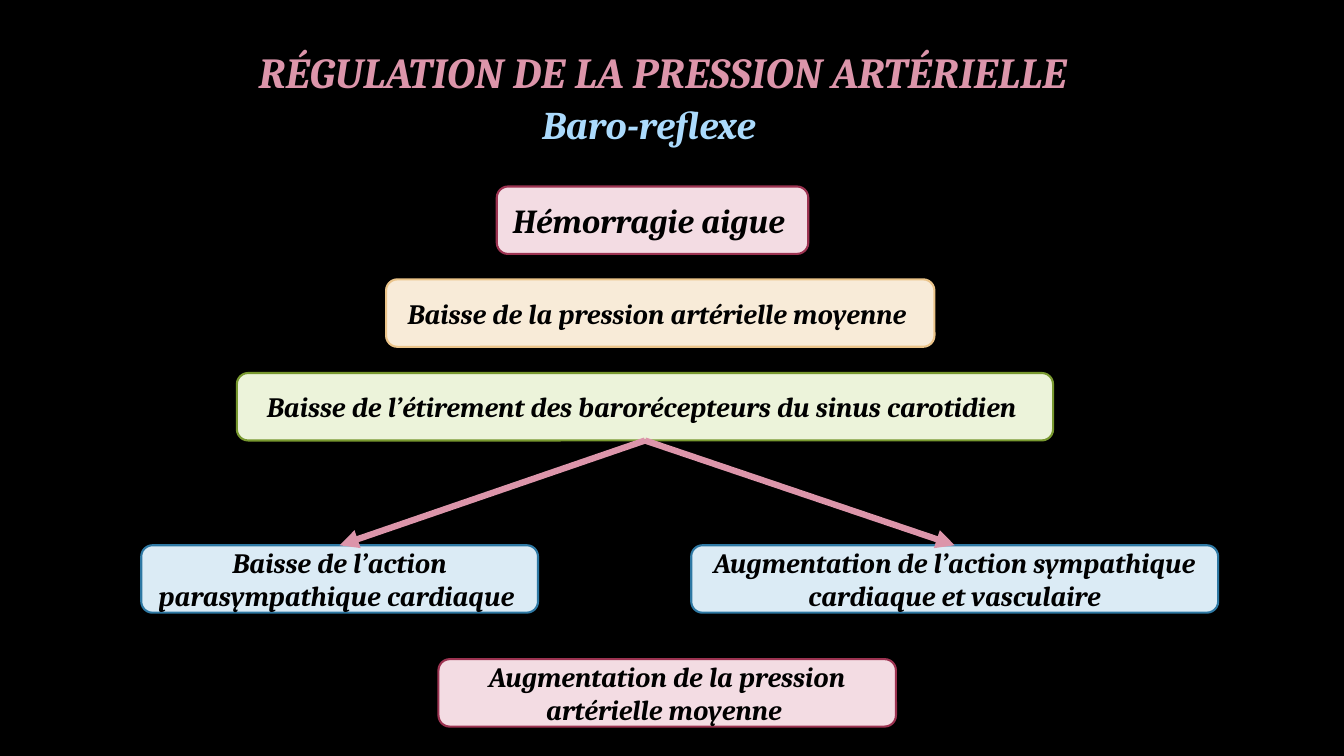
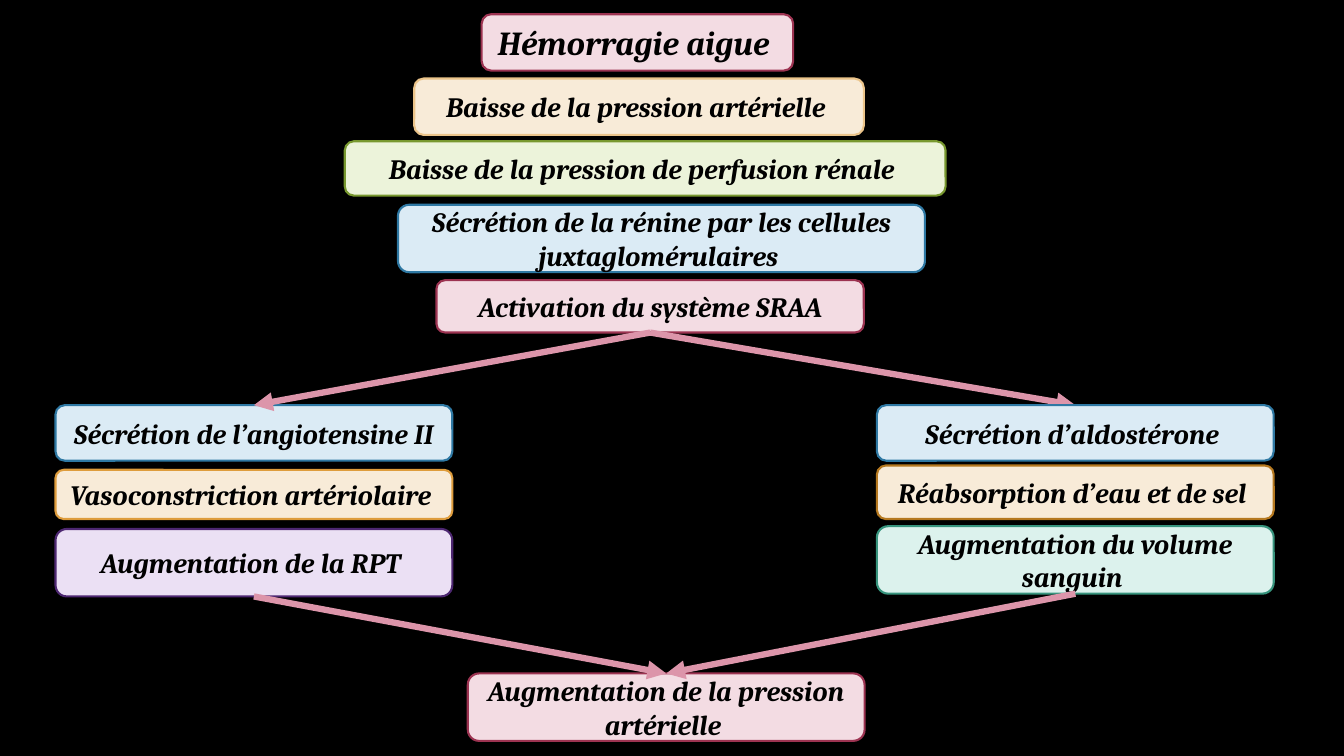
from lxml import etree
from pptx import Presentation
from pptx.dml.color import RGBColor
from pptx.enum.shapes import MSO_CONNECTOR, MSO_SHAPE
from pptx.enum.text import MSO_ANCHOR, PP_ALIGN
from pptx.oxml.ns import qn
from pptx.util import Cm, Pt

ROUNDED = MSO_SHAPE.ROUNDED_RECTANGLE
STRAIGHT = MSO_CONNECTOR.STRAIGHT
CENTER = PP_ALIGN.CENTER
TOP = MSO_ANCHOR.TOP
MIDDLE = MSO_ANCHOR.MIDDLE
TITLE_ONLY, BLANK = 5, 6
TOP_SITE, BOTTOM_SITE = 0, 2

BLACK = RGBColor(0x00, 0x00, 0x00)
ROSE = RGBColor(0xDC, 0x95, 0xAA)
SKY = RGBColor(0xAB, 0xDA, 0xFC)
CREAM = RGBColor(0xF8, 0xEB, 0xD8)

# Box styles: fill colour, outline colour
PINK = (RGBColor(0xF3, 0xDC, 0xE3), RGBColor(0x9C, 0x33, 0x51))
SAND = (CREAM, RGBColor(0xEB, 0xC4, 0x8A))
ORANGE = (CREAM, RGBColor(0xDE, 0x9C, 0x3C))
BROWN = (CREAM, RGBColor(0xB5, 0x78, 0x1F))
GREEN = (RGBColor(0xEC, 0xF3, 0xDA), RGBColor(0x78, 0x98, 0x2F))
BLUE = (RGBColor(0xDB, 0xEB, 0xF5), RGBColor(0x2E, 0x78, 0xA3))
TEAL = (RGBColor(0xDC, 0xF2, 0xED), RGBColor(0x37, 0x94, 0x7D))
PURPLE = (RGBColor(0xEB, 0xE0, 0xF4), RGBColor(0x4D, 0x27, 0x71))

BOX_HEIGHT = 1.7
COLUMN_WIDTH = 10
WIDE_WIDTH = 13.28
START_WIDTH = 7.85


class Deck:
    """Holds the shared style and the slide being filled; lengths are in cm."""

    font = "Cambria"

    def __init__(self):
        self.presentation = Presentation()
        self.presentation.slide_width = Cm(33.87)
        self.presentation.slide_height = Cm(19.05)
        background = self.presentation.slide_master.background.fill
        background.solid()
        background.fore_color.rgb = BLACK
        self.slide = None

    def new_slide(self, layout):
        layouts = self.presentation.slide_layouts
        self.slide = self.presentation.slides.add_slide(layouts[layout])

    def add_text(self, shape, text, size, color, anchor=MIDDLE):
        frame = shape.text_frame
        frame.word_wrap = True
        frame.vertical_anchor = anchor
        paragraph = frame.paragraphs[0]
        paragraph.alignment = CENTER
        run = paragraph.add_run()
        run.text = text
        font = run.font
        font.name, font.size = self.font, Pt(size)
        font.bold = font.italic = True
        font.color.rgb = color

    def title(self, text):
        title = self.slide.shapes.title
        title.left, title.top = Cm(2.44), Cm(0)
        title.width, title.height = Cm(28.75), Cm(3.6)
        self.add_text(title, text, 30.6, ROSE)

    def subtitle(self, text):
        box = self.slide.shapes.add_textbox(Cm(8.86), Cm(2.41), Cm(15.21), Cm(1.45))
        self.add_text(box, text, 28, SKY, TOP)

    def box(self, text, style, left, top, width, height=BOX_HEIGHT, size=20):
        shape = self.slide.shapes.add_shape(
            ROUNDED, Cm(left), Cm(top), Cm(width), Cm(height))
        shape.shadow.inherit = False
        fill, outline = style
        shape.fill.solid()
        shape.fill.fore_color.rgb = fill
        shape.line.color.rgb = outline
        shape.line.width = Pt(1.5)
        self.add_text(shape, text, size, BLACK)
        return shape

    def column(self, left, rows):
        """Draw boxes of equal width; each row is text, style, top, height."""
        return [self.box(text, style, left, top, COLUMN_WIDTH, height)
                for text, style, top, height in rows]

    def arrow(self, source, target, behind=False):
        """Join the bottom of source to the top of target."""
        connector = self.slide.shapes.add_connector(STRAIGHT, 0, 0, 0, 0)
        connector.begin_connect(source, BOTTOM_SITE)
        connector.end_connect(target, TOP_SITE)
        connector.line.color.rgb = ROSE
        connector.line.width = Pt(4.5)
        properties = connector.element.spPr
        line = properties.find(qn("a:ln"))
        etree.SubElement(line, qn("a:tailEnd"), type="triangle")
        etree.SubElement(properties, qn("a:effectLst"))
        if behind:
            target.element.addprevious(connector.element)


def baroreflex_slide(deck):
    deck.new_slide(TITLE_ONLY)
    deck.title("RÉGULATION DE LA PRESSION ARTÉRIELLE ")
    deck.subtitle("Baro-reflexe ")
    deck.box("Hémorragie aigue ", PINK, 12.52, 4.7, START_WIDTH, size=24)
    deck.box("Baisse de la pression artérielle moyenne ", SAND, 9.73, 7.04, 13.82)
    receptors = deck.box(
        "Baisse de l’étirement des barorécepteurs du sinus carotidien ",
        GREEN, 5.97, 9.4, 20.57)
    parasympathetic = deck.box("Baisse de l’action parasympathique cardiaque ",
                               BLUE, 3.56, 13.74, COLUMN_WIDTH)
    sympathetic = deck.box(
        "Augmentation de l’action sympathique cardiaque et vasculaire",
        BLUE, 17.42, 13.74, WIDE_WIDTH)
    deck.box("Augmentation de la pression artérielle moyenne ",
             PINK, 11.05, 16.61, 11.53)
    for response in (parasympathetic, sympathetic):
        deck.arrow(receptors, response)


def renin_slide(deck):
    deck.new_slide(BLANK)
    deck.box("Hémorragie aigue ", PINK, 12.14, 0.36, START_WIDTH, 1.42, size=24)
    deck.box("Baisse de la pression artérielle ", SAND, 10.44, 1.98, 11.33, 1.42)
    deck.box("Baisse de la pression de perfusion rénale ",
             GREEN, 8.69, 3.56, 15.14, 1.37)
    deck.box("Sécrétion de la rénine par les cellules juxtaglomérulaires ",
             BLUE, 10.03, 5.16, WIDE_WIDTH)
    activation = deck.box("Activation du système SRAA",
                          PINK, 11, 7.06, 10.77, 1.32)
    vessels = deck.column(1.4, [
        ("Sécrétion de l’angiotensine II", BLUE, 10.21, 1.4),
        ("Vasoconstriction artériolaire ", ORANGE, 11.84, 1.24),
        ("Augmentation de la RPT ", PURPLE, 13.33, BOX_HEIGHT),
    ])
    volume = deck.column(22.1, [
        ("Sécrétion d’aldostérone ", BLUE, 10.21, 1.4),
        ("Réabsorption d’eau et de sel ", BROWN, 11.73, 1.35),
        ("Augmentation du volume sanguin ", TEAL, 13.26, BOX_HEIGHT),
    ])
    outcome = deck.box("Augmentation de la pression artérielle ",
                       PINK, 11.79, 16.97, COLUMN_WIDTH)
    deck.arrow(activation, vessels[0])
    deck.arrow(activation, volume[0], behind=True)
    for branch in (volume, vessels):
        deck.arrow(branch[-1], outcome)


def main():
    deck = Deck()
    baroreflex_slide(deck)
    renin_slide(deck)
    deck.presentation.save("out.pptx")


if __name__ == "__main__":
    main()
